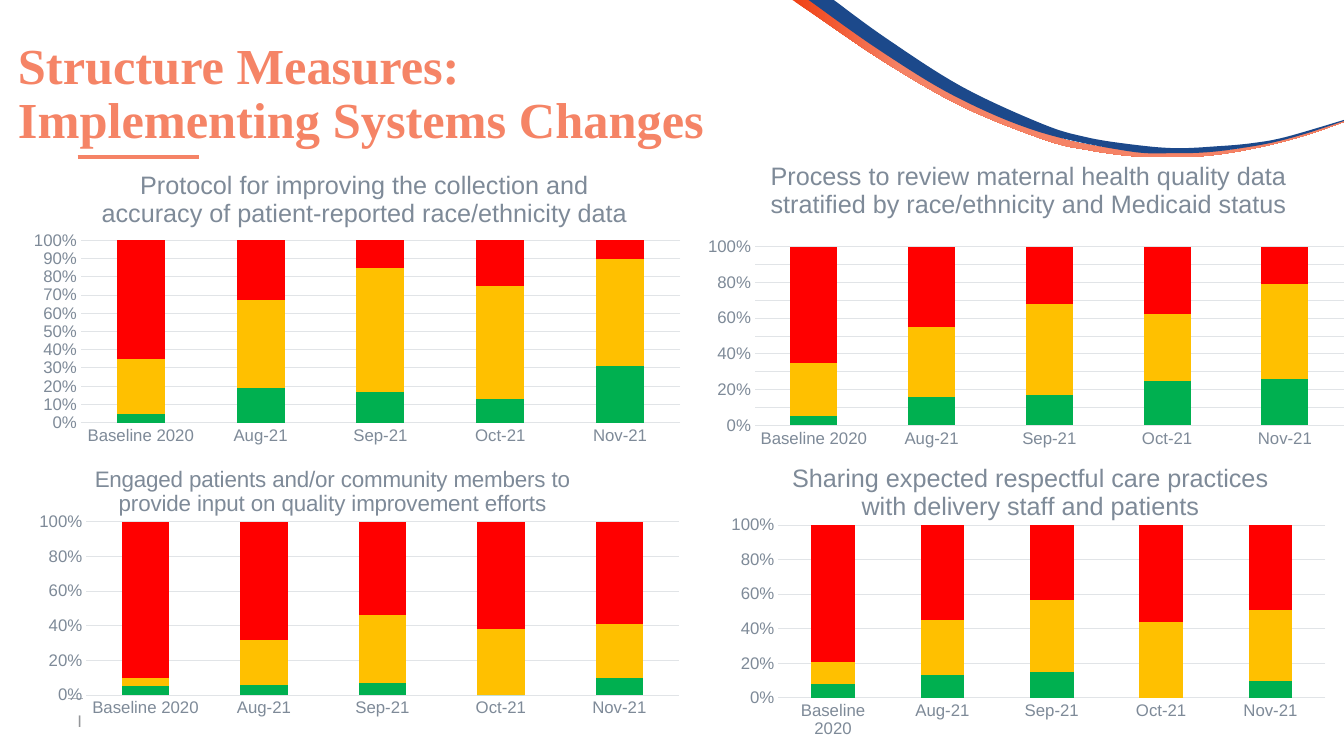
from dataclasses import dataclass

from lxml import etree
from pptx import Presentation
from pptx.chart.data import CategoryChartData
from pptx.dml.color import RGBColor
from pptx.enum.chart import XL_CHART_TYPE, XL_TICK_MARK
from pptx.enum.shapes import MSO_CONNECTOR
from pptx.enum.text import MSO_ANCHOR
from pptx.oxml.ns import qn
from pptx.util import Inches, Pt

STACKED_100 = XL_CHART_TYPE.COLUMN_STACKED_100
NO_TICK = XL_TICK_MARK.NONE
STRAIGHT = MSO_CONNECTOR.STRAIGHT
MIDDLE = MSO_ANCHOR.MIDDLE

COLORS = {
    "heading": "F58466", "coral": "F58366", "flame": "F04115", "navy": "1C498B",
    "rule": "AFB3B9", "footer": "949699", "label": "7E8A98", "grid": "E1E4E7",
}
SERIES_COLORS = ["00B050", "FFC000", "FF0000"]
CATEGORIES = ["Baseline 2020", "Aug-21", "Sep-21", "Oct-21", "Nov-21"]

Point = tuple[float, float]


@dataclass
class Measure:
    title: tuple[str, str]
    title_size: int
    title_at: Point
    box: tuple[float, float, float, float]
    plot: tuple[float, float, float, float]
    major_unit: float
    values: list[list[int]]


@dataclass
class Rule:
    left: float
    right: float
    y: float
    color: str
    width: float


@dataclass
class Label:
    text: str
    box: tuple[float, float, float, float]
    size: int
    font: str
    color: str
    bold: bool
    spacing: float


MEASURES = [
    Measure(("Protocol for improving the collection and",
             "accuracy of patient-reported race/ethnicity data"), 18, (0.12, 0.02),
            (0.17, 1.59, 6.73, 2.92), (0.094, 0.272, 0.883, 0.62), 0.1,
            [[5, 19, 17, 13, 31], [30, 48, 68, 62, 59], [65, 33, 15, 25, 10]]),
    Measure(("Process to review maternal health quality data",
             "stratified by race/ethnicity and Medicaid status"), 18, (0.11, 0.03),
            (6.89, 1.47, 6.57, 3.03), (0.091, 0.323, 0.889, 0.585), 0.1,
            [[5, 16, 17, 25, 26], [30, 39, 51, 38, 54], [65, 45, 32, 38, 21]]),
    Measure(("Engaged patients and/or community members to",
             "provide input on quality improvement efforts"), 16, (0.11, 0.03),
            (0.17, 4.5, 6.73, 3.05), (0.102, 0.222, 0.873, 0.564), 0.2,
            [[5, 6, 7, 0, 10], [5, 26, 39, 38, 31], [90, 68, 54, 62, 59]]),
    Measure(("Sharing expected respectful care practices",
             "with delivery staff and patients"), 18, (0.12, 0.02),
            (7.08, 4.5, 6.22, 2.85), (0.103, 0.249, 0.872, 0.602), 0.2,
            [[8, 13, 15, 0, 10], [13, 32, 42, 44, 41], [79, 55, 44, 56, 49]]),
]
RULES = [
    Rule(0.67, 0.82, 6.93, "rule", 0.5),
    Rule(0.77, 1.97, 1.56, "coral", 2.5),
]
LABELS = [
    Label("Structure Measures:\vImplementing Systems Changes", (0.08, 0.22, 12, 1.45),
          36, "Times New Roman", "heading", True, 0.9),
    Label("I", (0.67, 6.95, 4.5, 0.4), 12, "Arial", "footer", False, 1.0),
]
CORAL_EDGES = [
    [(8.05, 0), (8.82, 0.54), (9.58, 0.99), (10.39, 1.33), (10.81, 1.44), (11.25, 1.5),
     (11.68, 1.52), (12.01, 1.51), (12.34, 1.47), (12.77, 1.38), (13.33, 1.2)],
    [(13.33, 1.21), (12.99, 1.33), (12.67, 1.42), (12.35, 1.49), (12.02, 1.54),
     (11.69, 1.56), (11.24, 1.55), (10.8, 1.49), (10.37, 1.39), (9.55, 1.06),
     (8.78, 0.62), (8.04, 0.12), (7.86, 0)],
]
NAVY_EDGES = [
    [(8.27, 0), (8.79, 0.38), (9.54, 0.86), (10.34, 1.23), (10.77, 1.36), (11.2, 1.43),
     (11.65, 1.47), (12.09, 1.45), (12.42, 1.42), (12.75, 1.36), (13.33, 1.19)],
    [(13.33, 1.2), (12.97, 1.32), (12.64, 1.41), (12.31, 1.47), (11.98, 1.51),
     (11.64, 1.52), (11.19, 1.5), (10.31, 1.31), (9.48, 0.96), (8.71, 0.49), (8.02, 0)],
]


def rgb(name: str) -> RGBColor:
    return RGBColor.from_string(COLORS[name])


def smooth(points: list[Point], steps: int = 8) -> list[Point]:
    padded = [points[0], *points, points[-1]]
    curve = [points[0]]
    for a, b, c, d in zip(padded, padded[1:], padded[2:], padded[3:]):
        for i in range(1, steps + 1):
            t = i / steps
            x, y = (
                (2 * q + (r - p) * t + (2 * p - 5 * q + 4 * r - s) * t**2
                 + (3 * q - p - 3 * r + s) * t**3) / 2
                for p, q, r, s in zip(a, b, c, d)
            )
            curve.append((x, y))
    return curve


def add_swoosh(s, edges: list[list[Point]]):
    outline = [(Inches(x), Inches(y)) for edge in edges for x, y in smooth(edge)]
    builder = s.shapes.build_freeform(*outline[0])
    builder.add_line_segments(outline[1:], close=True)
    sp = builder.convert_to_shape()
    sp.shadow.inherit = False
    sp.line.fill.background()
    return sp


def add_rule(s, rule: Rule) -> None:
    y = Inches(rule.y)
    line = s.shapes.add_connector(STRAIGHT, Inches(rule.left), y, Inches(rule.right), y)
    line.line.color.rgb = rgb(rule.color)
    line.line.width = Pt(rule.width)
    etree.SubElement(line._element.spPr, qn("a:effectLst"))


def add_label(s, label: Label) -> None:
    tf = s.shapes.add_textbox(*map(Inches, label.box)).text_frame
    tf.word_wrap = True
    tf.vertical_anchor = MIDDLE
    p = tf.paragraphs[0]
    p.text = label.text
    p.line_spacing = label.spacing
    p.font.size = Pt(label.size)
    p.font.name = label.font
    p.font.bold = label.bold
    p.font.color.rgb = rgb(label.color)


def set_layout(parent, index: int, settings: dict[str, str | float]) -> None:
    for old in parent.findall(qn("c:layout")):
        parent.remove(old)
    layout = etree.Element(qn("c:layout"))
    manual = etree.SubElement(layout, qn("c:manualLayout"))
    for tag, value in settings.items():
        etree.SubElement(manual, qn(f"c:{tag}")).set("val", str(value))
    parent.insert(index, layout)


def style_font(font, size: int) -> None:
    font.size = Pt(size)
    font.name = "Arial"
    font.bold = False
    font.color.rgb = rgb("label")


def style_line(line) -> None:
    line.color.rgb = rgb("grid")
    line.width = Pt(0.75)


def add_measure(s, measure: Measure) -> None:
    data = CategoryChartData()
    data.categories = CATEGORIES
    for number, values in enumerate(measure.values, 1):
        data.add_series(f"Series {number}", values)
    chart = s.shapes.add_chart(STACKED_100, *map(Inches, measure.box), data).chart
    chart.has_legend = False
    style_font(chart.font, 12)

    tf = chart.chart_title.text_frame
    tf.text = "\n".join(measure.title)
    for p in tf.paragraphs:
        style_font(p.font, measure.title_size)
    x, y = measure.title_at
    set_layout(chart._chartSpace.find(".//" + qn("c:title")), 1,
               {"xMode": "edge", "yMode": "edge", "x": x, "y": y})
    set_layout(chart._chartSpace.find(".//" + qn("c:plotArea")), 0,
               {"layoutTarget": "inner", "xMode": "edge", "yMode": "edge",
                **dict(zip("xywh", measure.plot))})

    plot = chart.plots[0]
    plot.gap_width = 150
    plot.overlap = 100
    for series, color in zip(plot.series, SERIES_COLORS):
        series.format.fill.solid()
        series.format.fill.fore_color.rgb = RGBColor.from_string(color)
    for axis in (chart.category_axis, chart.value_axis):
        axis.major_tick_mark = axis.minor_tick_mark = NO_TICK
        style_font(axis.tick_labels.font, 12)
    style_line(chart.category_axis.format.line)
    axis = chart.value_axis
    axis.format.line.fill.background()
    style_line(axis.major_gridlines.format.line)
    axis.major_unit = measure.major_unit
    axis.tick_labels.number_format = "0%"
    axis.tick_labels.number_format_is_linked = False


def main() -> None:
    prs = Presentation()
    prs.slide_width, prs.slide_height = Inches(13.33), Inches(7.5)
    s = prs.slides.add_slide(prs.slide_layouts[6])

    fill = add_swoosh(s, CORAL_EDGES).fill
    fill.gradient()
    fill.gradient_angle = 0
    for stop, color, position in zip(fill.gradient_stops, ("flame", "coral"), (0, 0.2)):
        stop.color.rgb = rgb(color)
        stop.position = position
    fill = add_swoosh(s, NAVY_EDGES).fill
    fill.solid()
    fill.fore_color.rgb = rgb("navy")

    for rule in RULES:
        add_rule(s, rule)
    for label in LABELS:
        add_label(s, label)
    for measure in MEASURES:
        add_measure(s, measure)
    prs.save("out.pptx")


if __name__ == "__main__":
    main()
